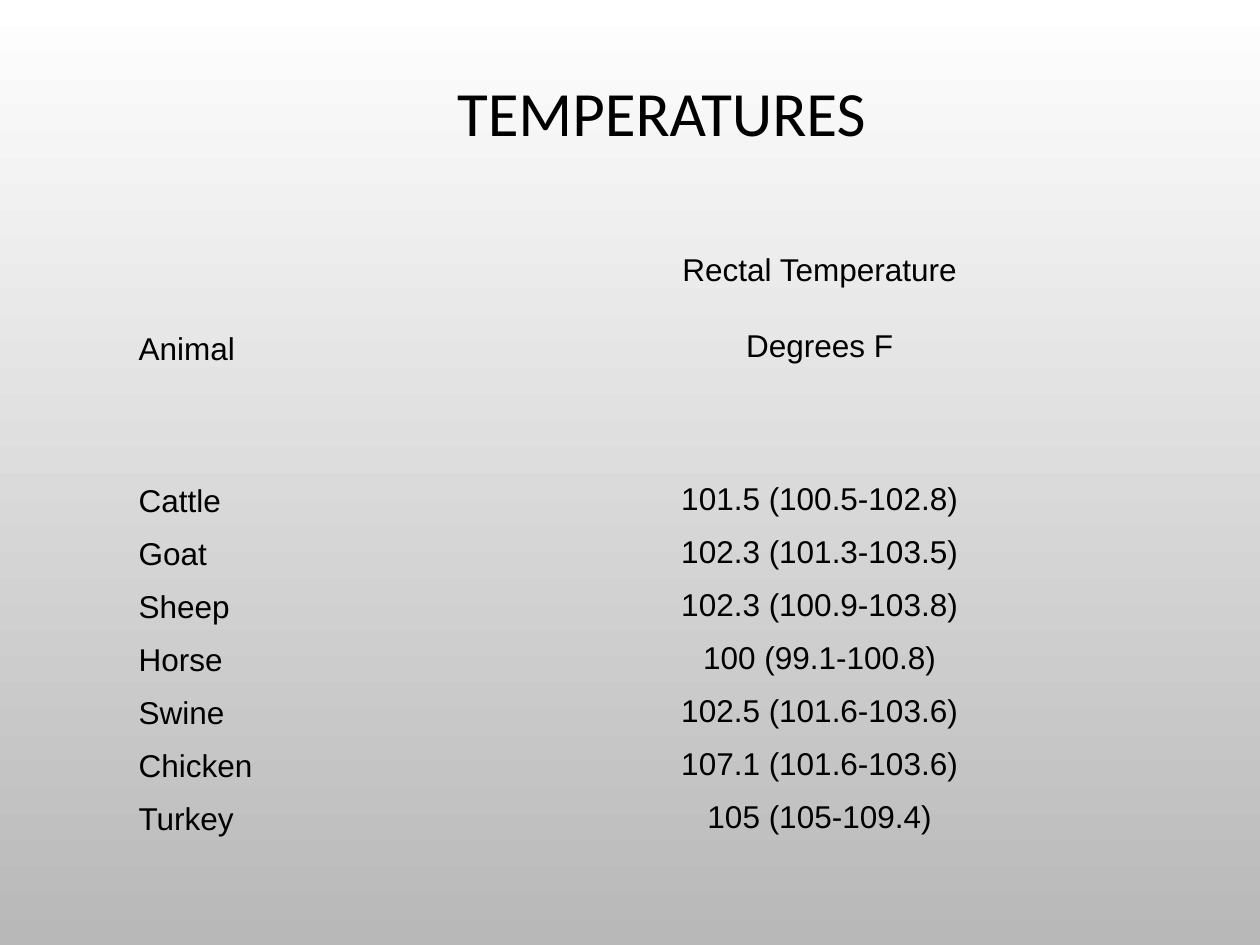
"""Builds a slide listing the rectal temperatures of farm animals."""
import pptx
import pptx.dml.color
import pptx.enum.text
import pptx.oxml.ns
import pptx.util

Pt = pptx.util.Pt
RGBColor = pptx.dml.color.RGBColor
ALIGN = pptx.enum.text.PP_ALIGN
ANCHOR = pptx.enum.text.MSO_ANCHOR

BLACK = RGBColor(0x00, 0x00, 0x00)
WHITE = RGBColor(0xFF, 0xFF, 0xFF)
GREY = RGBColor(0xB8, 0xB8, 0xB8)

NO_STYLE_NO_GRID = "{2D5ABB26-0587-4C30-8999-92F81FD0307C}"
TITLE_FONT = {"name": "Calibri", "size": Pt(36)}
BODY_FONT = {"name": "Arial", "size": Pt(18)}
INDENT = Pt(27)
TALL, SHORT = 57, 30.3

ROWS = [
    (TALL, "", "Rectal Temperature"),
    (SHORT, "Animal", "Degrees F"),
    (TALL, "", ""),
    (SHORT, "Cattle", "101.5 (100.5-102.8)"),
    (SHORT, "Goat", "102.3 (101.3-103.5)"),
    (SHORT, "Sheep", "102.3 (100.9-103.8)"),
    (SHORT, "Horse", "100 (99.1-100.8)"),
    (SHORT, "Swine", "102.5 (101.6-103.6)"),
    (SHORT, "Chicken", "107.1 (101.6-103.6)"),
    (SHORT, "Turkey", "105 (105-109.4)"),
]
COLUMNS = [
    (180.7, ALIGN.LEFT, ANCHOR.BOTTOM),
    (431.3, ALIGN.CENTER, ANCHOR.MIDDLE),
]


class SlideBuilder:
    """Holds the text style and the current slide."""

    def __init__(self, prs, color):
        self.s = prs.slides.add_slide(prs.slide_layouts[6])
        self.color = color

    def background(self, top, bottom):
        fill = self.s.background.fill
        fill.gradient()
        fill.gradient_angle = 270
        for stop, color, position in zip(fill.gradient_stops, (top, bottom), (0, 1)):
            stop.color.rgb = color
            stop.position = position

    def add_text(self, p, text, font, align):
        p.alignment = align
        r = p.add_run()
        r.text = text
        for key, value in font.items():
            setattr(r.font, key, value)
        r.font.color.rgb = self.color

    def title(self, text, left, top, width, height):
        sp = self.s.shapes.add_textbox(Pt(left), Pt(top), Pt(width), Pt(height))
        tf = sp.text_frame
        tf.word_wrap = True
        tf.vertical_anchor = ANCHOR.MIDDLE
        p = tf.paragraphs[0]
        p.line_spacing = 0.9
        self.add_text(p, text, TITLE_FONT, ALIGN.CENTER)

    def table(self, rows, columns, left, top):
        width = sum(column[0] for column in columns)
        height = sum(row[0] for row in rows)
        sp = self.s.shapes.add_table(
            len(rows), len(columns), Pt(left), Pt(top), Pt(width), Pt(height))
        table = sp.table
        table.first_row = table.horz_banding = False
        style = sp._element.find(".//" + pptx.oxml.ns.qn("a:tableStyleId"))
        style.text = NO_STYLE_NO_GRID
        for column, (size, _, _) in zip(table.columns, columns):
            column.width = Pt(size)
        for row, (size, *texts) in zip(table.rows, rows):
            row.height = Pt(size)
            for cell, text, (_, align, anchor) in zip(row.cells, texts, columns):
                cell.fill.background()
                cell.vertical_anchor = anchor
                if text:
                    self.cell_text(cell.text_frame.paragraphs[0], text, align)

    def cell_text(self, p, text, align):
        self.add_text(p, text, BODY_FONT, align)
        pPr = p._p.get_or_add_pPr()
        for key, value in {"marL": INDENT, "indent": -INDENT}.items():
            pPr.set(key, str(int(value)))


def main():
    prs = pptx.Presentation()
    prs.slide_width, prs.slide_height = Pt(720), Pt(540)
    slide = SlideBuilder(prs, BLACK)
    slide.background(WHITE, GREY)
    slide.title("TEMPERATURES", 72, 21.6, 612, 90)
    slide.table(ROWS, COLUMNS, 72, 126)
    prs.save("out.pptx")


if __name__ == "__main__":
    main()
